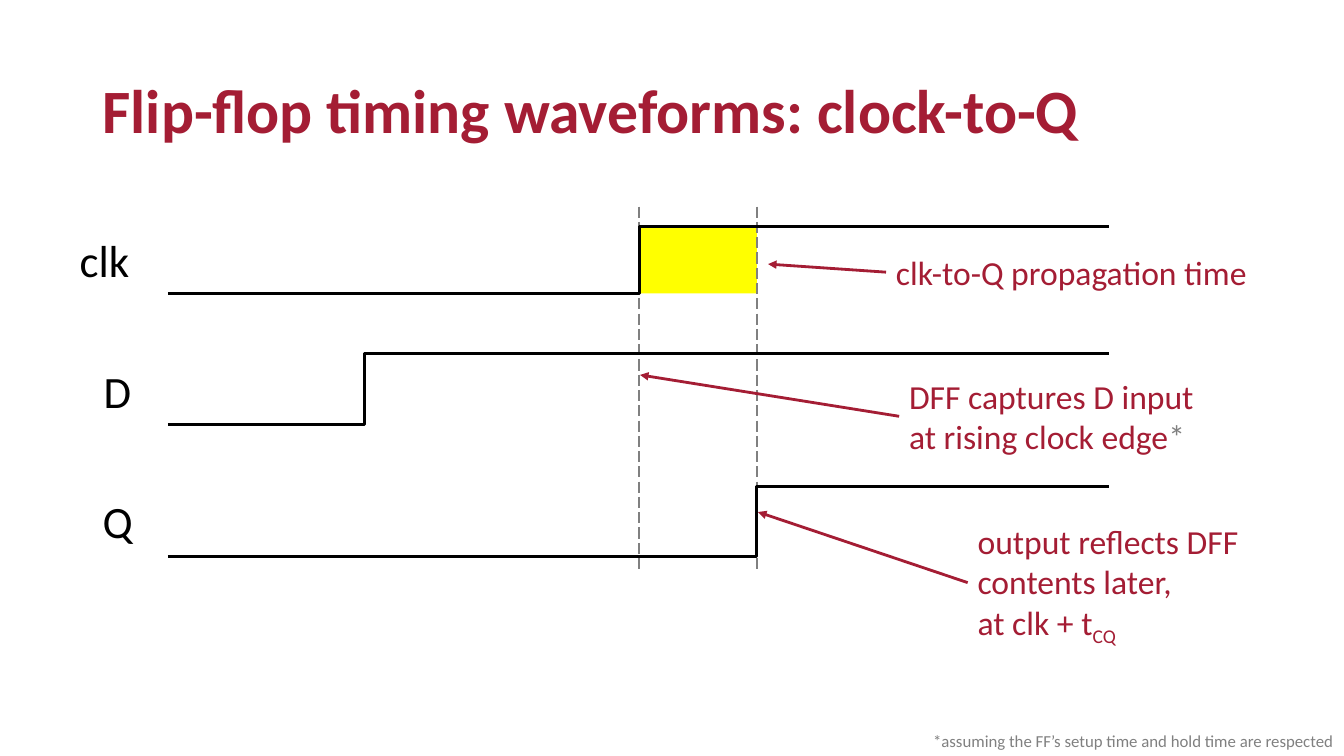
from dataclasses import dataclass

from lxml.etree import SubElement
from pptx import Presentation
from pptx.dml.color import RGBColor
from pptx.enum.dml import MSO_LINE_DASH_STYLE as Dash
from pptx.enum.shapes import MSO_CONNECTOR as Connector, MSO_SHAPE as Shape
from pptx.enum.text import MSO_ANCHOR as Anchor, PP_ALIGN as Align
from pptx.oxml.ns import qn
from pptx.util import Inches, Pt


@dataclass(frozen=True)
class Theme:
    font: str = "Calibri"
    accent: str = "A41D34"
    signal: str = "000000"
    muted: str = "808080"
    highlight: str = "FFFF00"
    title_size: int = 44
    label_size: int = 32
    note_size: int = 24
    footnote_size: int = 12
    thick: int = 2
    thin: int = 1


@dataclass(frozen=True)
class Run:
    text: str
    color: str = ""
    baseline: int = 0


class TimingSlide:
    COLUMNS, ROWS = 40, 30

    def __init__(self, presentation, theme):
        self.theme = theme
        self.column = presentation.slide_width / self.COLUMNS
        self.row = presentation.slide_height / self.ROWS
        self.slide = presentation.slides.add_slide(presentation.slide_layouts[6])

    def place(self, x, y):
        return round(x * self.column), round(y * self.row)

    def text(self, box, paragraphs, size, color, align=Align.LEFT,
             anchor=Anchor.TOP, bold=False, wrap=True, spacing=1.0):
        left, top, width, height = box
        shape = self.slide.shapes.add_textbox(
            *self.place(left, top), *self.place(width, height))
        frame = shape.text_frame
        frame.word_wrap = wrap
        frame.vertical_anchor = anchor
        for index, runs in enumerate(paragraphs):
            paragraph = frame.add_paragraph() if index else frame.paragraphs[0]
            paragraph.alignment = align
            paragraph.line_spacing = spacing
            paragraph.font.name = self.theme.font
            paragraph.font.size = Pt(size)
            paragraph.font.bold = bold
            paragraph.font.color.rgb = RGBColor.from_string(color)
            for part in runs:
                run = paragraph.add_run()
                run.text = part.text
                if part.color:
                    run.font.color.rgb = RGBColor.from_string(part.color)
                if part.baseline:
                    run.font._element.set("baseline", str(part.baseline * 1000))

    def line(self, start, end, color, width, kind=Connector.STRAIGHT):
        connector = self.slide.shapes.add_connector(
            kind, *self.place(*start), *self.place(*end))
        connector.line.color.rgb = RGBColor.from_string(color)
        connector.line.width = Pt(width)
        SubElement(connector._element.spPr, qn("a:effectLst"))
        return connector

    def marker(self, x, top, bottom):
        connector = self.line((x, top), (x, bottom), self.theme.muted, self.theme.thin)
        connector.line.dash_style = Dash.LONG_DASH

    def arrow(self, start, end):
        connector = self.line(start, end, self.theme.accent, self.theme.thick)
        SubElement(connector.line._get_or_add_ln(), qn("a:tailEnd"), type="triangle")

    def waveform(self, start, end, edge):
        connector = self.line(start, end, self.theme.signal, self.theme.thick,
                              Connector.ELBOW)
        share = (edge - start[0]) / (end[0] - start[0])
        guides = connector._element.spPr.find(qn("a:prstGeom")).get_or_add_avLst()
        SubElement(guides, qn("a:gd"), name="adj1", fmla=f"val {round(share * 100000)}")

    def band(self, left, top, width, height):
        shape = self.slide.shapes.add_shape(
            Shape.RECTANGLE, *self.place(left, top), *self.place(width, height))
        shape.shadow.inherit = False
        shape.fill.solid()
        shape.fill.fore_color.rgb = RGBColor.from_string(self.theme.highlight)
        shape.line.fill.background()

    def title(self, box, text):
        self.text(box, [[Run(text)]], self.theme.title_size, self.theme.accent,
                  anchor=Anchor.MIDDLE, bold=True, spacing=0.9)

    def label(self, box, text):
        self.text(box, [[Run(text)]], self.theme.label_size, self.theme.signal,
                  align=Align.RIGHT)

    def note(self, box, paragraphs):
        self.text(box, paragraphs, self.theme.note_size, self.theme.accent)

    def footnote(self, box, text):
        self.text(box, [[Run(text)]], self.theme.footnote_size, self.theme.muted,
                  align=Align.RIGHT, anchor=Anchor.BOTTOM, wrap=False)


def main():
    presentation = Presentation()
    presentation.slide_width = Inches(13.33)
    presentation.slide_height = Inches(7.5)
    theme = Theme()
    timing = TimingSlide(presentation, theme)

    wave_start, wave_end = 5, 33
    data_edge, clock_edge, output_edge = 10.86, 19.02, 22.53
    signals = [
        ("clk", clock_edge, 9, 11.64, (1.8, 9.04, 2.34, 2.56)),
        ("D", data_edge, 14.04, 16.84, (2.76, 14.24, 1.44, 2.56)),
        ("Q", output_edge, 19.32, 22.08, (2.76, 19.4, 1.44, 2.56)),
    ]
    notes = [
        ((26.37, 9.8, 11.85, 2), [[Run("clk-to-Q propagation time")]],
         10.8, (22.86, 10.48)),
        ((26.76, 14.72, 9.39, 3.64),
         [[Run("DFF captures D input at rising clock edge"), Run("*", theme.muted)]],
         16.52, (19.05, 14.88)),
        ((28.8, 20.48, 8.43, 5.24),
         [[Run("output reflects DFF contents later,")],
          [Run("at clk + t"), Run("CQ", baseline=-25)]],
         23.12, (22.56, 20.32)),
    ]

    timing.title((2.76, 1.6, 34.5, 5.8), "Flip-flop timing waveforms: clock-to-Q")
    timing.band(clock_edge, 9.04, output_edge - clock_edge, 2.6)
    for edge in (clock_edge, output_edge):
        timing.marker(edge, 8.2, 22.68)
    for name, edge, high, low, box in signals:
        timing.waveform((wave_start, low), (wave_end, high), edge)
        timing.label(box, name)
    for box, paragraphs, arrow_row, target in notes:
        timing.note(box, paragraphs)
        timing.arrow((box[0], arrow_row), target)
    timing.footnote((27.33, 28.8, 12.66, 1.2),
                    "*assuming the FF’s setup time and hold time are respected")

    presentation.save("out.pptx")


if __name__ == "__main__":
    main()
